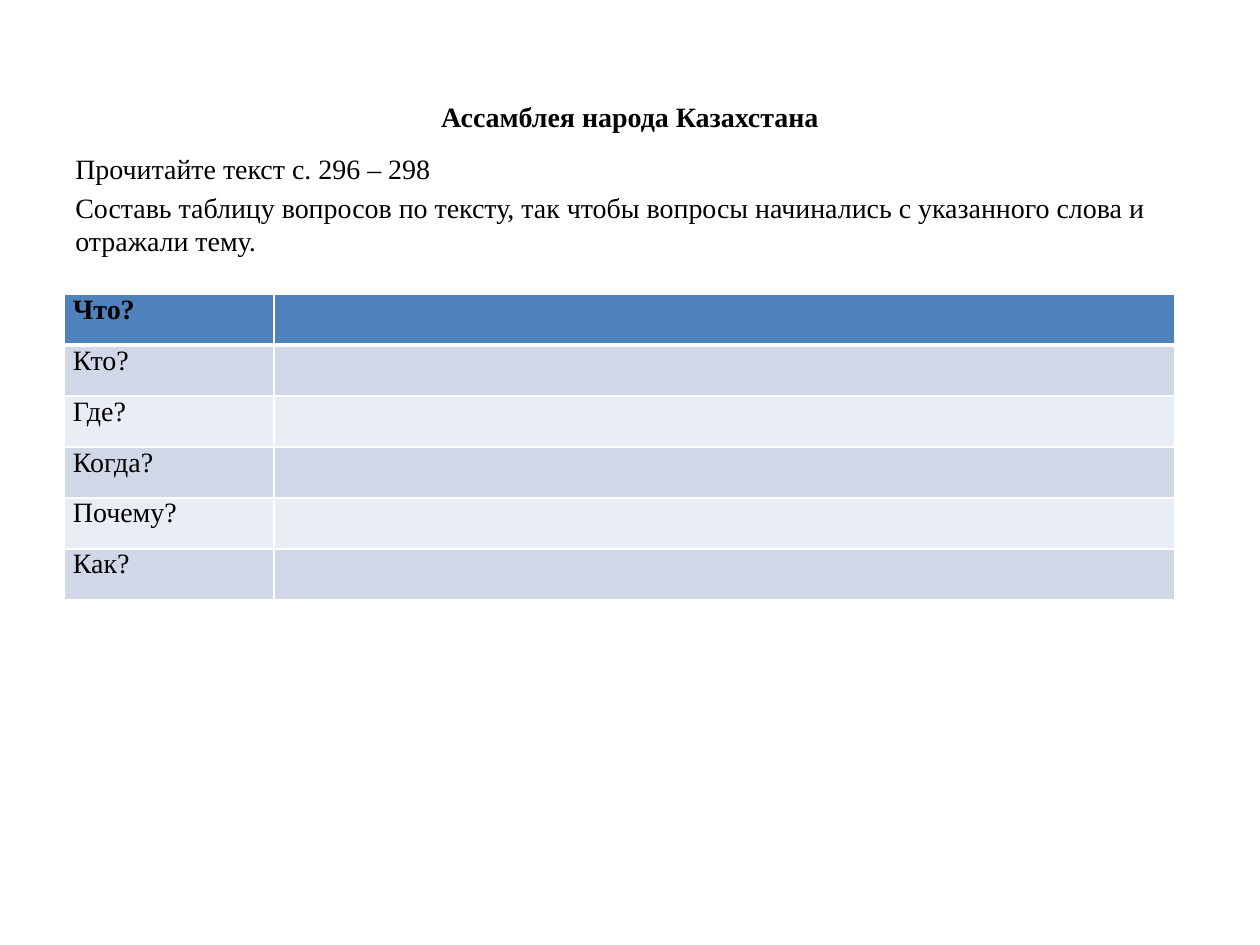
from dataclasses import dataclass

from lxml.etree import SubElement
from pptx import Presentation
from pptx.dml.color import RGBColor
from pptx.enum.text import MSO_ANCHOR, PP_ALIGN
from pptx.oxml.ns import qn
from pptx.util import Emu, Pt

PX_PER_INCH = 126


@dataclass(frozen=True)
class Theme:
    font: str = "Times New Roman"
    size: int = 16
    text: str = "000000"
    header: str = "4F81BD"
    bands: tuple[str, str] = ("D0D8E8", "E9EDF4")
    border: str = "FFFFFF"
    thin: int = 1
    thick: int = 3


@dataclass(frozen=True)
class Area:
    left: int
    top: int
    width: int
    height: int

    def emu(self) -> tuple[Emu, ...]:
        return tuple(map(px, (self.left, self.top, self.width, self.height)))


THEME = Theme()
TITLE = "Ассамблея народа Казахстана"
TASKS = (
    "Прочитайте текст с. 296 – 298",
    "Составь таблицу вопросов по тексту, так чтобы вопросы начинались "
    "с указанного слова и отражали тему.",
)
QUESTIONS = ("Что?", "Кто?", "Где?", "Когда?", "Почему?", "Как?")
TITLE_AREA = Area(63, 38, 1134, 157)
TASK_AREA = Area(63, 145, 1134, 140)
COLUMN_WIDTHS = (210, 901)
ROW_HEIGHT = 51
TABLE_AREA = Area(64, 294, sum(COLUMN_WIDTHS), ROW_HEIGHT * len(QUESTIONS))


def px(length: int) -> Emu:
    return Emu(round(length * 914400 / PX_PER_INCH))


def style_paragraph(para, bold: bool = False) -> None:
    para.font.name = THEME.font
    para.font.size = Pt(THEME.size)
    para.font.bold = bold
    para.font.color.rgb = RGBColor.from_string(THEME.text)


def add_title(slide) -> None:
    title = slide.shapes.title
    title.left, title.top, title.width, title.height = TITLE_AREA.emu()
    frame = title.text_frame
    frame.text = TITLE
    frame.vertical_anchor = MSO_ANCHOR.MIDDLE
    para = frame.paragraphs[0]
    para.alignment = PP_ALIGN.CENTER
    style_paragraph(para, bold=True)


def add_tasks(slide) -> None:
    frame = slide.shapes.add_textbox(*TASK_AREA.emu()).text_frame
    frame.word_wrap = True
    frame.text = "\n".join(TASKS)
    for para in frame.paragraphs:
        para.space_before = Pt(THEME.size * 0.2)
        style_paragraph(para)


def set_borders(cell, top: int, bottom: int) -> None:
    """Draw the four cell edges; the fill must be set afterwards."""
    properties = cell._tc.get_or_add_tcPr()
    widths = {"L": THEME.thin, "R": THEME.thin, "T": top, "B": bottom}
    for side, width in widths.items():
        line = SubElement(properties, qn(f"a:ln{side}"), w=str(Pt(width)))
        fill = SubElement(line, qn("a:solidFill"))
        SubElement(fill, qn("a:srgbClr"), val=THEME.border)


def style_cell(cell, row: int) -> None:
    is_header = row == 0
    cell.margin_left = cell.margin_right = px(9)
    cell.margin_top = cell.margin_bottom = 0
    set_borders(
        cell,
        top=THEME.thick if row == 1 else THEME.thin,
        bottom=THEME.thick if is_header else THEME.thin,
    )
    color = THEME.header if is_header else THEME.bands[(row - 1) % 2]
    cell.fill.solid()
    cell.fill.fore_color.rgb = RGBColor.from_string(color)
    style_paragraph(cell.text_frame.paragraphs[0], bold=is_header)


def add_question_table(slide) -> None:
    table = slide.shapes.add_table(
        len(QUESTIONS), len(COLUMN_WIDTHS), *TABLE_AREA.emu()
    ).table
    for column, width in zip(table.columns, COLUMN_WIDTHS):
        column.width = px(width)
    for row, question in enumerate(QUESTIONS):
        table.rows[row].height = px(ROW_HEIGHT)
        table.cell(row, 0).text = question
        for cell in table.rows[row].cells:
            style_cell(cell, row)


def main() -> None:
    deck = Presentation()
    deck.slide_width, deck.slide_height = px(1260), px(945)
    slide = deck.slides.add_slide(deck.slide_layouts[5])
    add_title(slide)
    add_tasks(slide)
    add_question_table(slide)
    deck.save("out.pptx")


if __name__ == "__main__":
    main()
